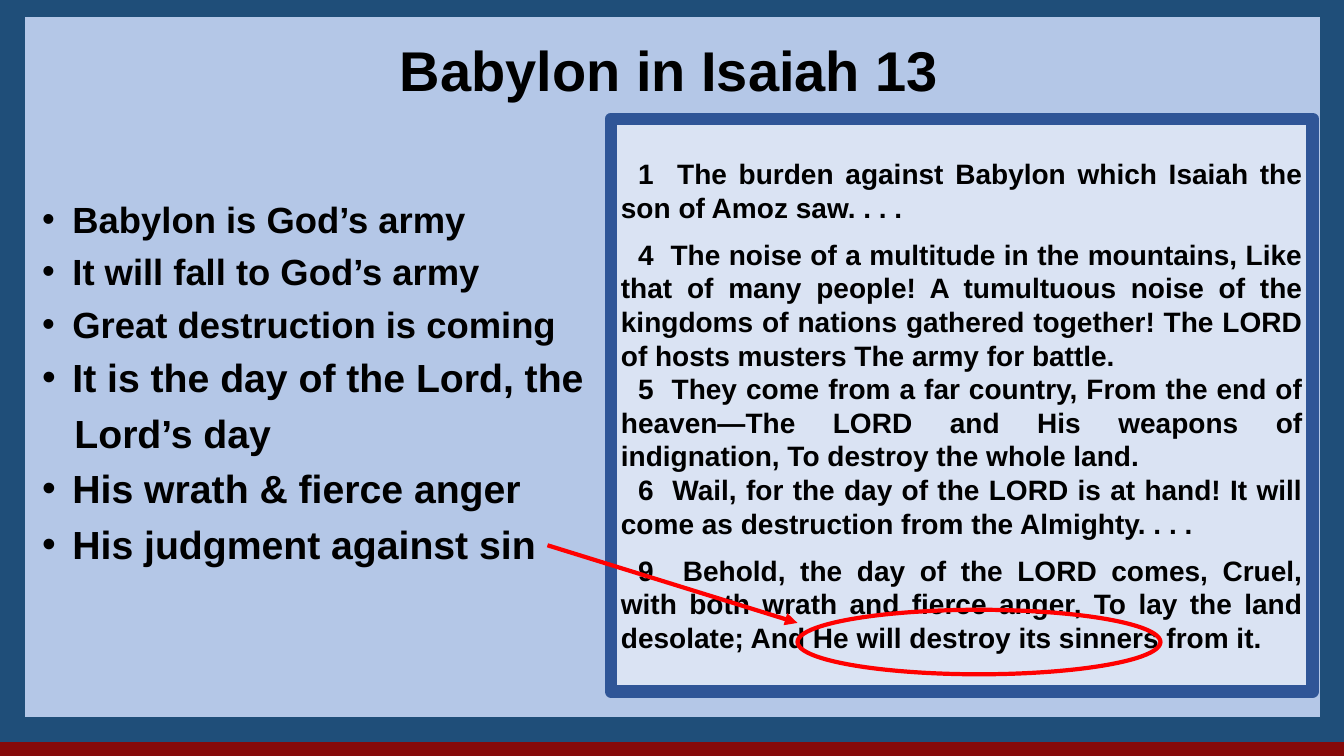
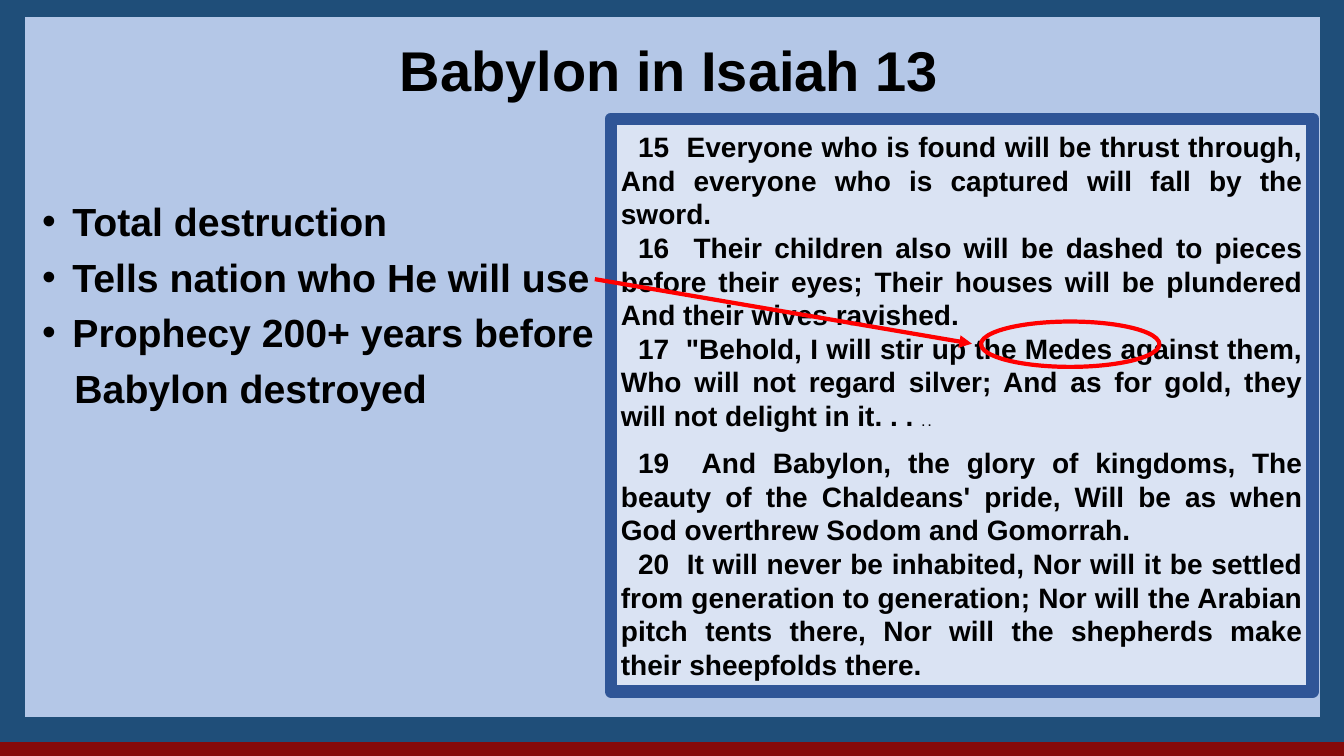
from lxml.etree import SubElement
from pptx import Presentation
from pptx.dml.color import RGBColor
from pptx.enum.shapes import MSO_CONNECTOR, MSO_SHAPE
from pptx.enum.text import MSO_ANCHOR, PP_ALIGN
from pptx.oxml.ns import qn
from pptx.util import Inches, Pt

COLORS = {
    "back": "860A0A", "frame": "B4C7E7", "edge": "1F4E79",
    "panel": "DAE3F3", "rim": "2F5597", "mark": "FF0000", "text": "000000",
}
FONT = "Arial"
WIDE, HIGH = Inches(13.33), Inches(7.5)

# Boxes as percent of the slide: left, top, width, height
FRAME = (0.9, 0.53, 98.27, 96)
TITLE = (1.95, 4, 95.65, 10.27)
BODY = (2.4, 25.47, 43.06, 50.67)
PANEL = (45.46, 15.73, 52.21, 75.73)

# Points: text, size, has bullet
# Verses: text, small tail, starts a new passage
# Ring and arrow: percent of the panel
PAGES = [
    {
        "title": "Babylon in Isaiah 13",
        "points": [
            ("Babylon is God’s army", 26, True),
            ("It will fall to God’s army", 26, True),
            ("Great destruction is coming", 26, True),
            ("It is the day of the Lord, the", 28, True),
            ("Lord’s day", 28, False),
            ("His wrath & fierce anger", 28, True),
            ("His judgment against sin", 28, True),
        ],
        "verses": [
            ("1  The burden against Babylon which Isaiah the son of Amoz saw. . . .", "", False),
            ("4  The noise of a multitude in the mountains, Like that of many people! "
             "A tumultuous noise of the kingdoms of nations gathered together! "
             "The LORD of hosts musters The army for battle.", "", True),
            ("5  They come from a far country, From the end of heaven—The LORD and His "
             "weapons of indignation, To destroy the whole land.", "", False),
            ("6  Wail, for the day of the LORD is at hand! It will come as destruction "
             "from the Almighty. . . .", "", False),
            ("9  Behold, the day of the LORD comes, Cruel, with both wrath and fierce "
             "anger, To lay the land desolate; And He will destroy its sinners from it.",
             "", True),
        ],
        "ring": (26.58, 85.74, 51.72, 11.27),
        "arrow": (-9.05, 74.47, 26.58, 88.03),
    },
    {
        "title": "Babylon in Isaiah 13",
        "points": [
            ("Total destruction", 28, True),
            ("Tells nation who He will use", 28, True),
            ("Prophecy 200+ years before", 28, True),
            ("Babylon destroyed", 28, False),
        ],
        "verses": [
            ("15  Everyone who is found will be thrust through, And everyone who is "
             "captured will fall by the sword.", "", False),
            ("16  Their children also will be dashed to pieces before their eyes; Their "
             "houses will be plundered And their wives ravished.", "", False),
            ("17  \"Behold, I will stir up the Medes against them, Who will not regard "
             "silver; And as for gold, they will not delight in it. . . ", ". .", False),
            ("19  And Babylon, the glory of kingdoms, The beauty of the Chaldeans' pride, "
             "Will be as when God overthrew Sodom and Gomorrah.", "", True),
            ("20  It will never be inhabited, Nor will it be settled from generation to "
             "generation; Nor will the Arabian pitch tents there, Nor will the shepherds "
             "make their sheepfolds there.", "", False),
        ],
        "ring": (52.73, 35.39, 25.43, 7.92),
        "arrow": (-2.3, 27.99, 51.44, 39.26),
    },
]


def color(name):
    return RGBColor.from_string(COLORS[name])


def place(box):
    """Turn percents of the slide into lengths."""
    x, y, w, h = box
    return [round(part * size / 100)
            for part, size in ((x, WIDE), (y, HIGH), (w, WIDE), (h, HIGH))]


def within(box, x, y):
    """Turn percents of a box into percents of the slide."""
    return box[0] + x * box[2] / 100, box[1] + y * box[3] / 100


def add_form(slide, kind, box, fill, line, width):
    form = slide.shapes.add_shape(kind, *place(box))
    form.shadow.inherit = False
    if fill:
        form.fill.solid()
        form.fill.fore_color.rgb = color(fill)
    else:
        form.fill.background()
    form.line.color.rgb = color(line)
    form.line.width = Pt(width)
    return form


def add_text(slide, box):
    frame = slide.shapes.add_textbox(*place(box)).text_frame
    frame.word_wrap = True
    return frame


def add_para(frame, first, text, size, align, indent=(0, 0)):
    para = frame.paragraphs[0] if first else frame.add_paragraph()
    para.add_run().text = text
    para.alignment = align
    font = para.font
    font.name, font.size, font.bold = FONT, Pt(size), True
    font.color.rgb = color("text")
    props = para._p.get_or_add_pPr()
    for name, length in zip(("marL", "indent"), indent):
        props.set(name, str(Inches(length)))
    return para


def add_dot(para):
    props = para._p.get_or_add_pPr()
    face = SubElement(props, qn("a:buFont"), typeface=FONT)
    dot = SubElement(props, qn("a:buChar"), char="•")
    # Bullets must come before the default run properties
    base = props.find(qn("a:defRPr"))
    base.addprevious(face)
    base.addprevious(dot)


def draw_base(slide, title):
    # Background, square-cornered field and title
    slide.background.fill.solid()
    slide.background.fill.fore_color.rgb = color("back")
    field = add_form(slide, MSO_SHAPE.RECTANGLE, FRAME, "frame", "edge", 18)
    SubElement(field._element.spPr.find(qn("a:ln")), qn("a:miter"), lim="800000")
    add_para(add_text(slide, TITLE), True, title, 40, PP_ALIGN.CENTER)


def draw_points(slide, box, points):
    frame = add_text(slide, box)
    for i, (text, size, dot) in enumerate(points):
        indent = (0.3, -0.3) if dot else (0.32, 0)
        para = add_para(frame, i == 0, text, size, PP_ALIGN.LEFT, indent)
        para.space_after = Pt(6)
        if dot:
            add_dot(para)


def draw_verses(slide, box, verses):
    panel = add_form(slide, MSO_SHAPE.RECTANGLE, box, "panel", "rim", 9)
    frame = panel.text_frame
    frame.word_wrap = True
    frame.vertical_anchor = MSO_ANCHOR.MIDDLE
    for i, (text, tail, fresh) in enumerate(verses):
        para = add_para(frame, i == 0, text, 20, PP_ALIGN.JUSTIFY, (0, 0.17))
        para.space_before = Pt(9.6 if fresh else 0)
        if tail:
            run = para.add_run()
            run.text = tail
            run.font.size = Pt(8)


def draw_mark(slide, box, ring, arrow):
    # Arrow from a point to its verse
    ends = within(box, *arrow[:2]) + within(box, *arrow[2:])
    link = slide.shapes.add_connector(MSO_CONNECTOR.STRAIGHT, *place(ends))
    link.line.color.rgb = color("mark")
    link.line.width = Pt(3)
    props = link._element.spPr
    SubElement(props.find(qn("a:ln")), qn("a:tailEnd"), type="triangle")
    SubElement(props, qn("a:effectLst"))
    # Ring around the words
    size = (ring[2] * box[2] / 100, ring[3] * box[3] / 100)
    area = within(box, *ring[:2]) + size
    add_form(slide, MSO_SHAPE.OVAL, area, None, "mark", 3)


def main():
    deck = Presentation()
    deck.slide_width, deck.slide_height = WIDE, HIGH
    for page in PAGES:
        slide = deck.slides.add_slide(deck.slide_layouts[6])
        draw_base(slide, page["title"])
        draw_verses(slide, PANEL, page["verses"])
        draw_points(slide, BODY, page["points"])
        draw_mark(slide, PANEL, page["ring"], page["arrow"])
    deck.save("out.pptx")


if __name__ == "__main__":
    main()
